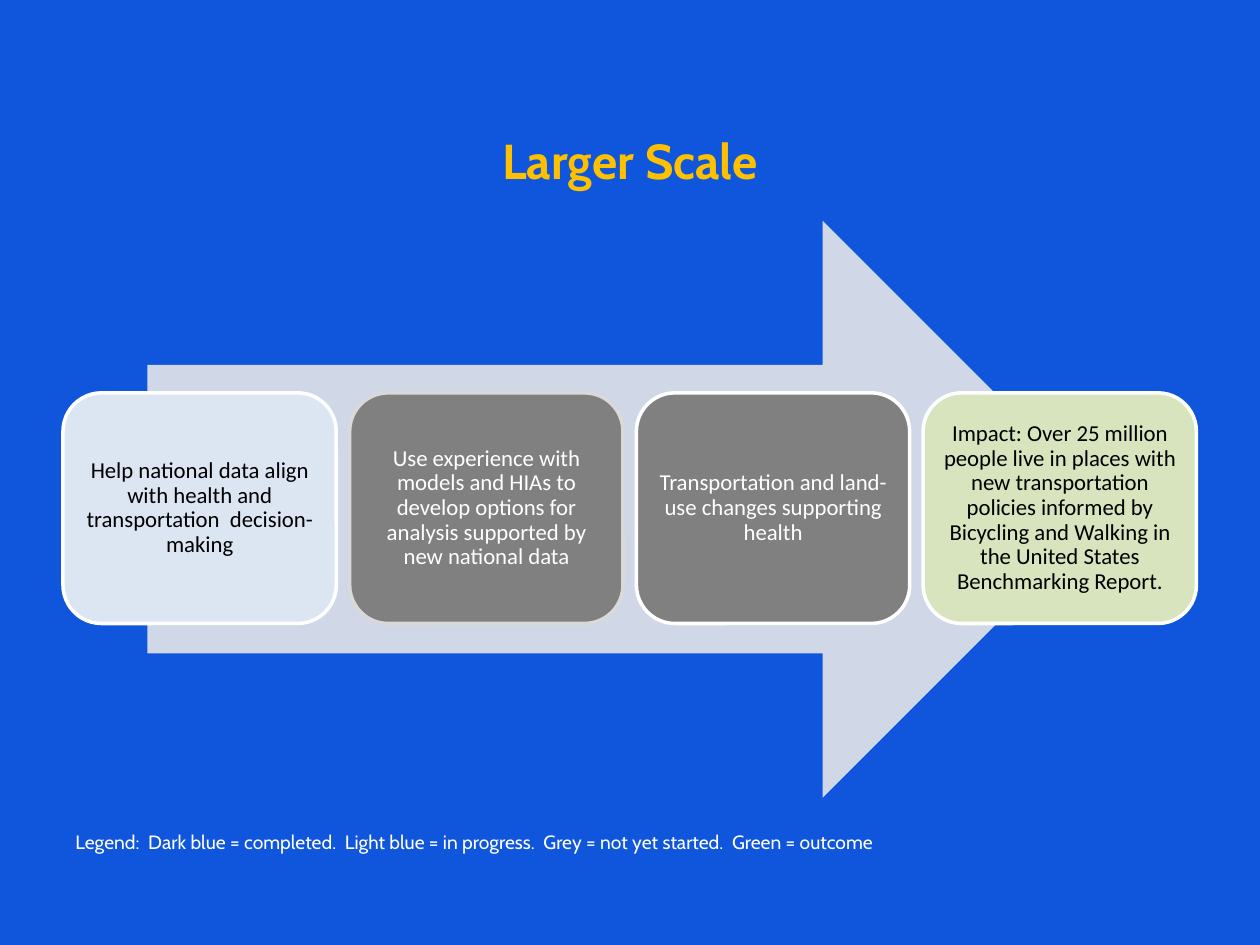
from pptx import Presentation, util as u
from pptx.dml import color
from pptx.enum import shapes, text

HUES = {
    "back": "0F56DC", "gold": "FFC000", "white": "FFFFFF", "black": "000000",
    "arrow": "D0D8E8", "blue": "DCE6F2", "grey": "808080", "edge": "D9D9D9",
    "green": "D7E4BD",
}
STEPS = [
    ("Help national data align with health and transportation  decision-making",
     "blue", "white", "black"),
    ("Use experience with models and HIAs to develop options for analysis "
     "supported by new national data", "grey", "edge", "white"),
    ("Transportation and land-use changes supporting health",
     "grey", "white", "white"),
    ("Impact: Over 25 million people live in places with new transportation "
     "policies informed by Bicycling and Walking in the United States "
     "Benchmarking Report.", "green", "white", "black"),
]
LEFT, WIDE, PITCH = 1.27, 5.51, 5.78


def rgb(name):
    """Return the named colour."""
    return color.RGBColor.from_string(HUES[name])


def write(frame, words, font="Calibri", size=13, hue="white", bold=False,
          align=text.PP_ALIGN.CENTER, anchor=text.MSO_ANCHOR.MIDDLE, lead=0.9):
    """Fill a text frame with one formatted paragraph."""
    frame.word_wrap = True
    frame.vertical_anchor = anchor
    para = frame.paragraphs[0]
    para.alignment = align
    para.line_spacing = lead
    run = para.add_run()
    run.text = words
    run.font.name = font
    run.font.size = u.Pt(size)
    run.font.bold = bold
    run.font.color.rgb = rgb(hue)


def label(slide, words, top, high, **style):
    """Add a full-width line of text that rests on the bottom of its box."""
    box = slide.shapes.add_textbox(u.Cm(LEFT), u.Cm(top), u.Cm(22.86), u.Cm(high))
    write(box.text_frame, words, font="Cabin", anchor=text.MSO_ANCHOR.BOTTOM,
          **style)


def block(slide, kind, left, top, wide, high, fill, line=None):
    """Add a flat preset shape, outlined if a line colour is given."""
    shape = slide.shapes.add_shape(
        kind, u.Cm(left), u.Cm(top), u.Cm(wide), u.Cm(high))
    shape.shadow.inherit = False
    shape.fill.solid()
    shape.fill.fore_color.rgb = rgb(fill)
    if line:
        shape.line.color.rgb = rgb(line)
        shape.line.width = u.Pt(2)
    else:
        shape.line.fill.background()
    return shape


def card(slide, left, words, fill, line, hue):
    """Add one rounded step with its text."""
    shape = block(slide, shapes.MSO_SHAPE.ROUNDED_RECTANGLE,
                  left, 7.92, WIDE, 4.65, fill, line)
    frame = shape.text_frame
    frame.margin_left = frame.margin_right = u.Cm(0.13)
    frame.margin_top = frame.margin_bottom = u.Cm(0.13)
    write(frame, words, hue=hue)


def main():
    """Build and save the slide."""
    deck = Presentation()
    deck.slide_width, deck.slide_height = u.Cm(25.4), u.Cm(19.05)
    slide = deck.slides.add_slide(deck.slide_layouts[6])
    slide.background.fill.solid()
    slide.background.fill.fore_color.rgb = rgb("back")
    label(slide, "Larger Scale", 0.76, 3.18, size=28, hue="gold", bold=True,
          lead=u.Pt(30))
    label(slide, "Legend:  Dark blue = completed.  Light blue = in progress.  "
          "Grey = not yet started.  Green = outcome", 16.08, 1.24, size=11,
          align=text.PP_ALIGN.LEFT, lead=u.Pt(11))
    block(slide, shapes.MSO_SHAPE.RIGHT_ARROW, 2.97, 4.45, 19.43, 11.63, "arrow")
    for i, step in enumerate(STEPS):
        card(slide, LEFT + i * PITCH, *step)
    deck.save("out.pptx")


if __name__ == "__main__":
    main()
